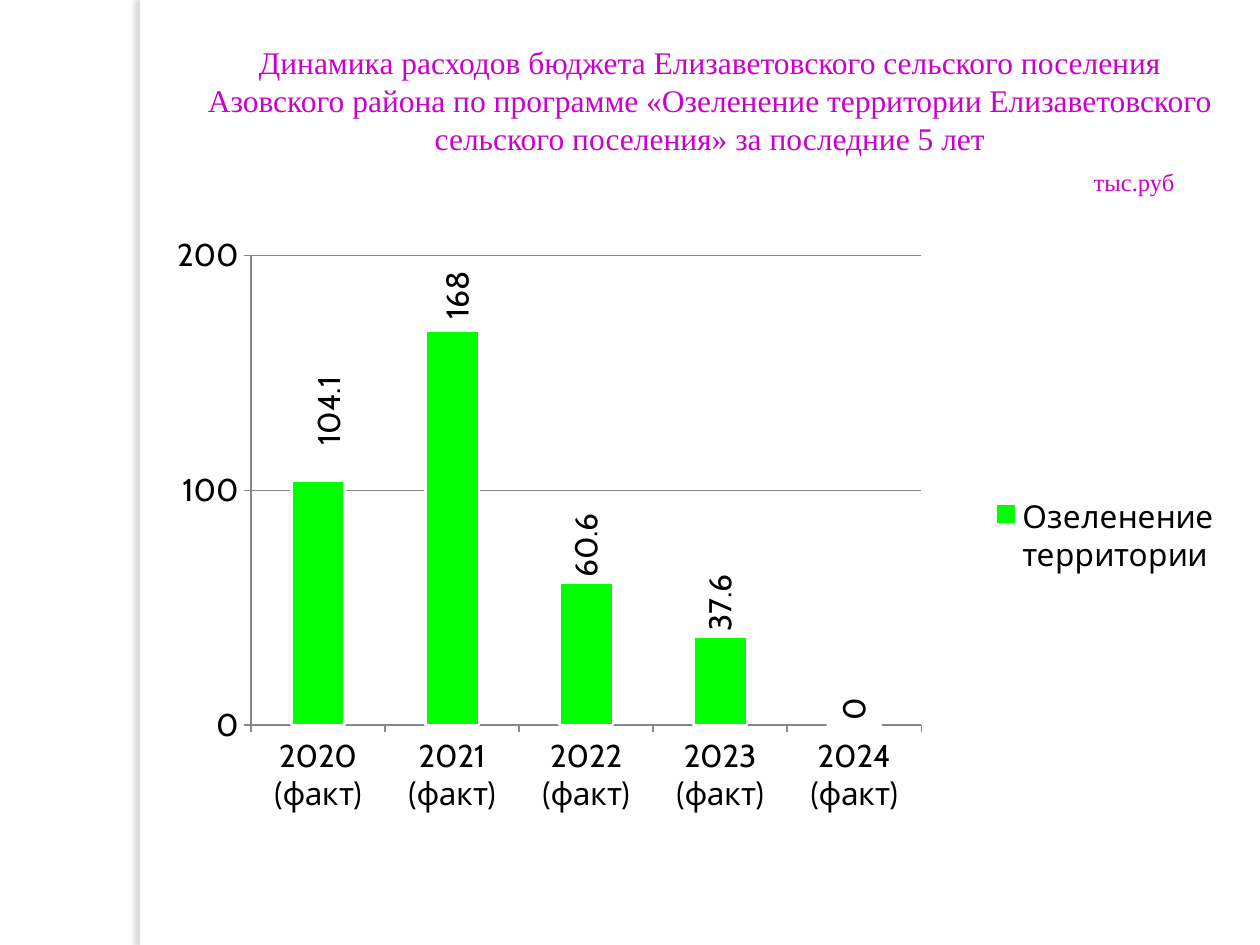
from lxml import etree
from pptx import Presentation
from pptx.chart.data import CategoryChartData
from pptx.dml.color import RGBColor
from pptx.enum.chart import XL_CHART_TYPE, XL_LABEL_POSITION, XL_LEGEND_POSITION, XL_TICK_LABEL_POSITION, XL_TICK_MARK
from pptx.enum.shapes import MSO_SHAPE
from pptx.enum.text import MSO_ANCHOR, PP_ALIGN
from pptx.oxml import parse_xml
from pptx.oxml.ns import qn
from pptx.util import Inches, Pt

COLUMN = XL_CHART_TYPE.COLUMN_CLUSTERED
OUTSIDE_END = XL_LABEL_POSITION.OUTSIDE_END
LEGEND_RIGHT = XL_LEGEND_POSITION.RIGHT
LABELS_LOW = XL_TICK_LABEL_POSITION.LOW
TICK_OUTSIDE = XL_TICK_MARK.OUTSIDE
TICK_NONE = XL_TICK_MARK.NONE
RECTANGLE = MSO_SHAPE.RECTANGLE
TOP = MSO_ANCHOR.TOP
CENTER = PP_ALIGN.CENTER
LEFT = PP_ALIGN.LEFT

COLORS = {
    name: RGBColor.from_string(value)
    for name, value in {
        "title": "CC00CC", "bar": "00FF00", "text": "000000",
        "white": "FFFFFF", "axis": "878787",
    }.items()
}
SHADOW_COLOR = "736F63"
CHART_NAMESPACE = "http://schemas.openxmlformats.org/drawingml/2006/chart"


def make_layout(**values):
    layout = etree.Element(qn("c:layout"), nsmap={"c": CHART_NAMESPACE})
    manual = etree.SubElement(layout, qn("c:manualLayout"))
    for name, value in values.items():
        etree.SubElement(manual, qn(f"c:{name}")).set("val", str(value))
    return layout


def style_labels(label):
    label.font.size = Pt(18)
    label.font.name = "Cabin"
    label.font.color.rgb = COLORS["text"]
    label.position = OUTSIDE_END


presentation = Presentation()
presentation.slide_width = Inches(10)
presentation.slide_height = Inches(7.5)
width, height = presentation.slide_width, presentation.slide_height
slide = presentation.slides.add_slide(presentation.slide_layouts[5])

band = slide.shapes.add_shape(RECTANGLE, int(width * 0.111), 0, int(width * 0.008), height)
band.fill.solid()
band.fill.fore_color.rgb = COLORS["white"]
band.line.fill.background()
band.shadow.inherit = False
effects = band._element.spPr.find(qn("a:effectLst"))
effects.append(parse_xml(
    '<a:outerShdw xmlns:a="http://schemas.openxmlformats.org/drawingml/2006/main" '
    'blurRad="38100" dist="38100" dir="10800000" algn="tl" rotWithShape="0">'
    f'<a:srgbClr val="{SHADOW_COLOR}"><a:alpha val="25000"/></a:srgbClr></a:outerShdw>'
))

title = slide.shapes.title
title.left, title.top = int(width * 0.154), int(height * 0.039)
title.width, title.height = int(width * 0.819), int(height * 0.18)
frame = title.text_frame
frame.word_wrap = True
frame.vertical_anchor = TOP
frame.text = (
    "Динамика расходов бюджета Елизаветовского сельского поселения Азовского района "
    "по программе «Озеленение территории Елизаветовского сельского поселения» за последние 5 лет\n"
    "тыс.руб"
)
heading, unit = frame.paragraphs
for paragraph, size, alignment in ((heading, 18, CENTER), (unit, 14, LEFT)):
    paragraph.alignment = alignment
    paragraph.space_before = Pt(0)
    paragraph.font.size = Pt(size)
    paragraph.font.name = "Times New Roman"
    paragraph.font.color.rgb = COLORS["title"]
unit.space_before = Pt(6)
unit_properties = unit._p.get_or_add_pPr()
unit_properties.set("marL", str(int(width * 0.704)))
unit_properties.set("indent", "0")

data = CategoryChartData()
data.categories = [f"{year} (факт)" for year in range(2020, 2025)]
data.add_series("Озеленение территории", (104.1, 168, 60.6, 37.6, 0))
chart = slide.shapes.add_chart(
    COLUMN, int(width * 0.122), int(height * 0.245), int(width * 0.858), int(height * 0.645), data
).chart
chart.has_title = False
chart.font.size = Pt(18)
chart.font.name = "Cabin"
chart.font.color.rgb = COLORS["text"]
chart.has_legend = True
chart.legend.position = LEGEND_RIGHT
chart.legend.include_in_layout = False

plot_area = chart._chartSpace.chart.plotArea
for old_layout in plot_area.findall(qn("c:layout")):
    plot_area.remove(old_layout)
plot_area.insert(0, make_layout(
    layoutTarget="inner", xMode="edge", yMode="edge", x=0.09, y=0.04, w=0.62, h=0.77
))

category_axis, value_axis = chart.category_axis, chart.value_axis
category_axis.tick_label_position = LABELS_LOW
value_axis.minimum_scale, value_axis.maximum_scale = 0, 200
value_axis.major_unit = 100
value_axis.has_major_gridlines = True
for axis in (category_axis, value_axis):
    axis.major_tick_mark = TICK_OUTSIDE
    axis.minor_tick_mark = TICK_NONE
for line in (category_axis.format.line, value_axis.format.line, value_axis.major_gridlines.format.line):
    line.color.rgb = COLORS["axis"]
    line.width = Pt(0.75)

plot = chart.plots[0]
plot.gap_width = 150
plot.vary_by_categories = False
series = plot.series[0]
series.invert_if_negative = False
series.format.fill.solid()
series.format.fill.fore_color.rgb = COLORS["bar"]
series.format.line.color.rgb = COLORS["white"]
series.format.line.width = Pt(1.5)

labels = series.data_labels
labels.show_value = True
style_labels(labels)
for index, (x_shift, y_shift) in enumerate(((0.01, -0.05), (0.005, -0.01))):
    label = series.points[index].data_label
    style_labels(label)
    element = labels._element.findall(qn("c:dLbl"))[index]
    element.insert(1, make_layout(x=x_shift, y=y_shift))
for body in labels._element.iter(qn("a:bodyPr")):
    body.set("rot", "-5400000")
    body.set("vert", "horz")

presentation.save("out.pptx")
